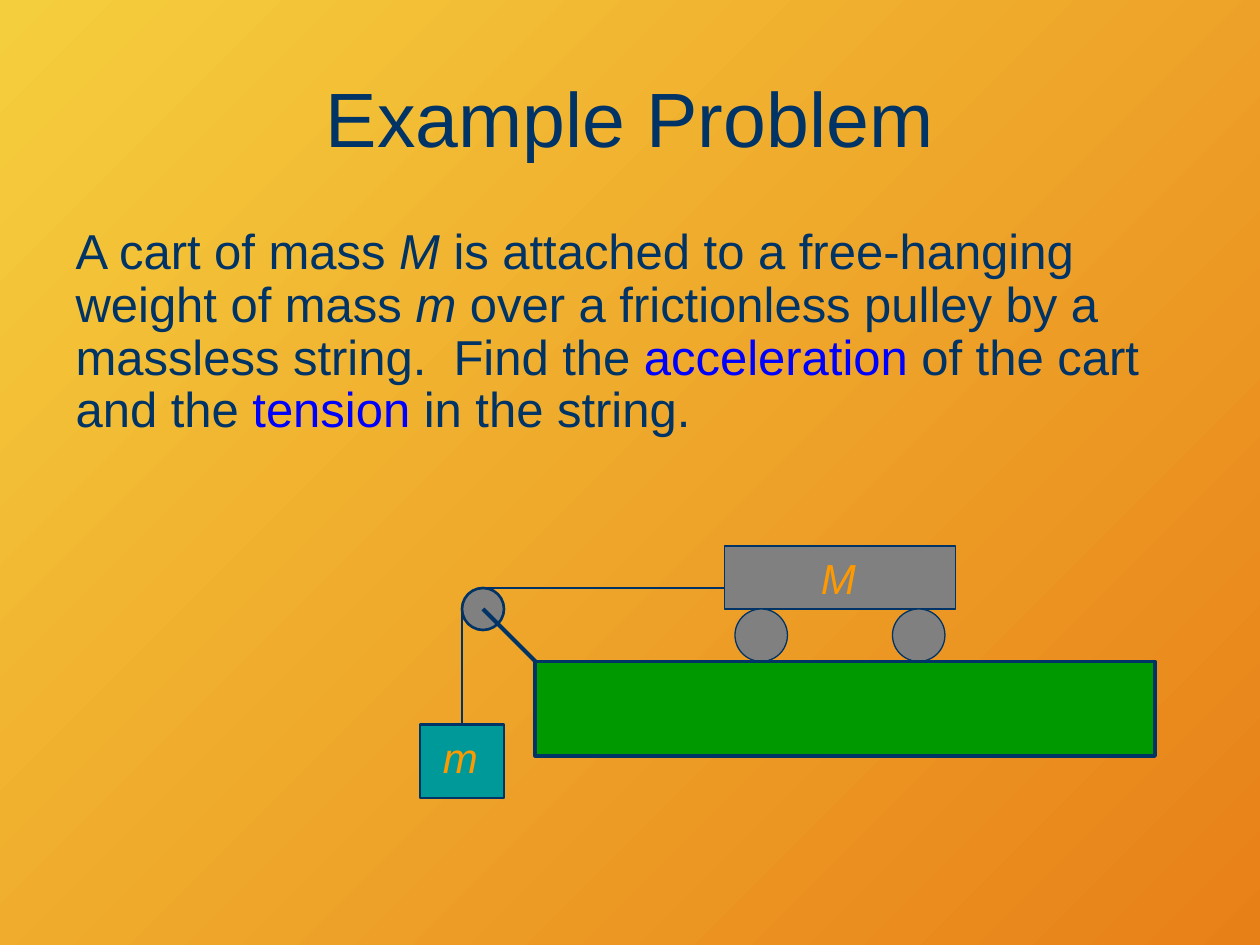
import pptx
import pptx.dml.color
import pptx.enum.shapes
import pptx.enum.text
import pptx.oxml.ns
import pptx.util
from lxml import etree

PX = 7620
FONT = "Arial"
NAVY, BLUE, ORANGE, GRAY = "003366", "0000FF", "FF9900", "808080"
BACKGROUND = ["F5CE3D", "E88018"]

TITLE = "Example Problem"
PROBLEM = [
    ("A cart of mass ", NAVY, False),
    ("M", NAVY, True),
    (" is attached to a free-hanging weight of mass ", NAVY, False),
    ("m", NAVY, True),
    (" over a frictionless pulley by a massless string.  Find the ", NAVY, False),
    ("acceleration", BLUE, False),
    (" of the cart and the ", NAVY, False),
    ("tension", BLUE, False),
    (" in the string.", NAVY, False),
]
TITLE_BOX = (60, 36, 1080, 150)
PROBLEM_BOX = (60, 210, 1080, 230)

BODIES = {
    "cart": ("RECTANGLE", (690, 520, 220, 60), GRAY, 0.75),
    "rear wheel": ("OVAL", (700, 580, 50, 50), GRAY, 0.75),
    "front wheel": ("OVAL", (850, 580, 50, 50), GRAY, 0.75),
    "table": ("RECTANGLE", (510, 630, 590, 90), "009900", 2.25),
    "pulley": ("OVAL", (440, 560, 40, 40), GRAY, 1.5),
    "weight": ("RECTANGLE", (400, 690, 80, 70), "009999", 1.5),
}
LINES = {
    "brace": ((510, 630), (460, 580), 2.25),
    "cart string": ((460, 560), (690, 560), 1.5),
    "weight string": ((440, 580), (440, 690), 1.5),
}
LABELS = [("M", (770, 520, 57, 60)), ("m", (410, 691, 57, 60))]


def emu(lengths):
    return [length * PX for length in lengths]


def color(hex_string):
    return pptx.dml.color.RGBColor.from_string(hex_string)


def format_run(run, size, hex_string, italic=False):
    run.font.name = FONT
    run.font.size = pptx.util.Pt(size)
    run.font.color.rgb = color(hex_string)
    run.font.italic = italic


def format_line(line, width):
    line.color.rgb = color(NAVY)
    line.width = pptx.util.Pt(width)


def place(placeholder, box, anchor):
    placeholder.left, placeholder.top, placeholder.width, placeholder.height = emu(box)
    placeholder.text_frame.auto_size = pptx.enum.text.MSO_AUTO_SIZE.NONE
    placeholder.text_frame.vertical_anchor = anchor


presentation = pptx.Presentation()
presentation.slide_width, presentation.slide_height = emu((1200, 900))
slide = presentation.slides.add_slide(presentation.slide_layouts[1])

background = slide.background.fill
background.gradient()
background.gradient_angle = 315
for stop, position, shade in zip(background.gradient_stops, (0, 1), BACKGROUND):
    stop.position = position
    stop.color.rgb = color(shade)

title, problem = slide.placeholders
place(title, TITLE_BOX, pptx.enum.text.MSO_ANCHOR.MIDDLE)
title.text_frame.text = TITLE
heading = title.text_frame.paragraphs[0]
heading.alignment = pptx.enum.text.PP_ALIGN.CENTER
format_run(heading.runs[0], 44, NAVY)

place(problem, PROBLEM_BOX, pptx.enum.text.MSO_ANCHOR.TOP)
statement = problem.text_frame.paragraphs[0]
statement.line_spacing = 0.9
for words, shade, italic in PROBLEM:
    run = statement.add_run()
    run.text = words
    format_run(run, 28, shade, italic)
properties = statement._p.get_or_add_pPr()
properties.set("marL", "0")
properties.set("indent", "0")
etree.SubElement(properties, pptx.oxml.ns.qn("a:buNone"))

drawn = {}
for name, (kind, box, fill, width) in BODIES.items():
    body = slide.shapes.add_shape(pptx.enum.shapes.MSO_SHAPE[kind], *emu(box))
    body.shadow.inherit = False
    body.fill.solid()
    body.fill.fore_color.rgb = color(fill)
    format_line(body.line, width)
    drawn[name] = body

for name, (start, end, width) in LINES.items():
    line = slide.shapes.add_connector(
        pptx.enum.shapes.MSO_CONNECTOR.STRAIGHT, *emu(start + end))
    format_line(line.line, width)
    etree.SubElement(line._element.spPr, pptx.oxml.ns.qn("a:effectLst"))
    drawn[name] = line
drawn["weight string"].end_connect(drawn["weight"], 0)

for symbol, box in LABELS:
    label = slide.shapes.add_textbox(*emu(box))
    label.text_frame.text = symbol
    label.text_frame.word_wrap = False
    label.text_frame.auto_size = pptx.enum.text.MSO_AUTO_SIZE.SHAPE_TO_FIT_TEXT
    mass = label.text_frame.paragraphs[0]
    mass.alignment = pptx.enum.text.PP_ALIGN.CENTER
    format_run(mass.runs[0], 24, ORANGE, True)

presentation.save("out.pptx")
